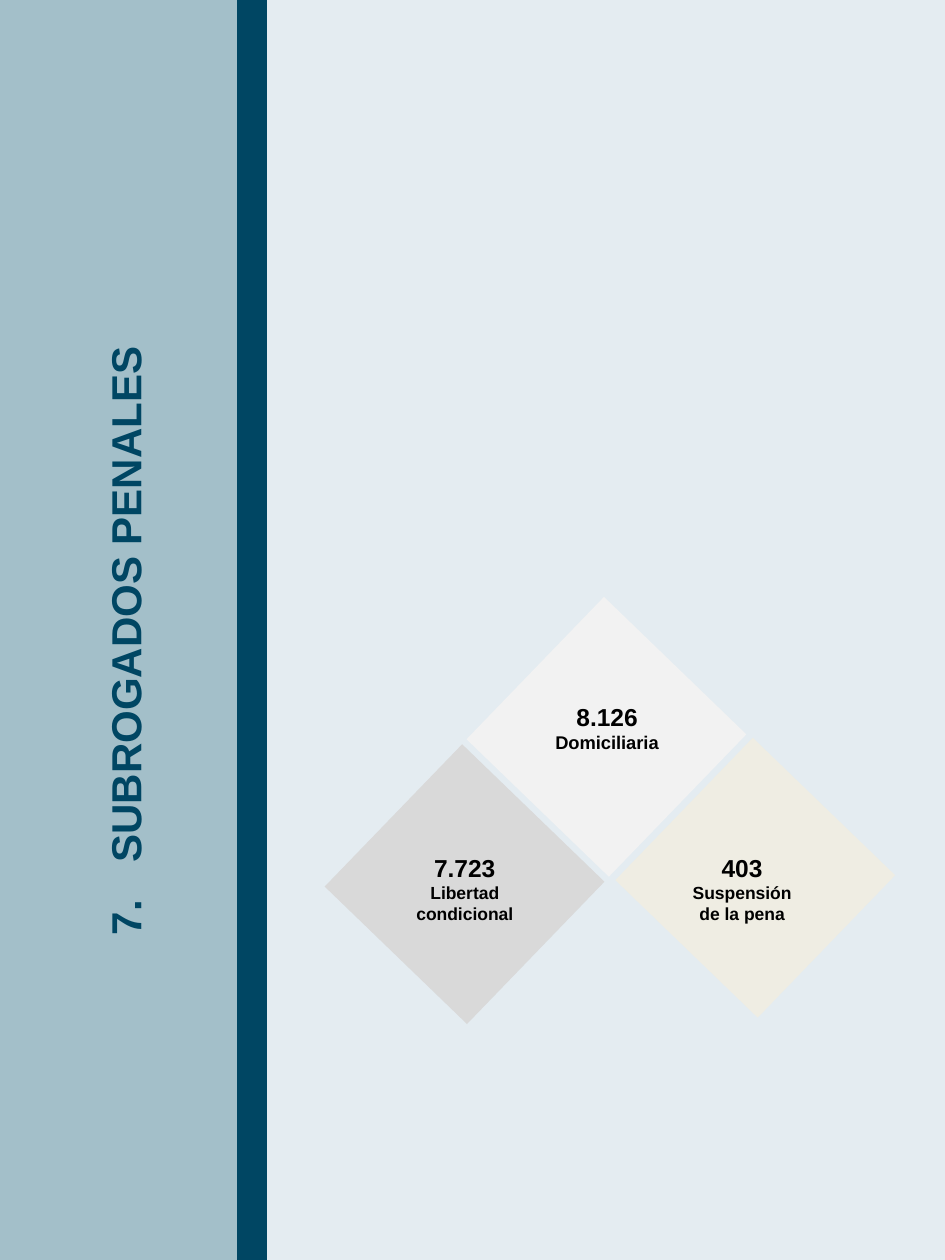
from pptx import Presentation
from pptx.dml.color import RGBColor
from pptx.enum.shapes import MSO_SHAPE as Shape
from pptx.enum.text import MSO_AUTO_SIZE as AutoSize, PP_ALIGN as Align
from pptx.util import Cm, Pt

NAVY = RGBColor(0x00, 0x46, 0x63)
TEAL = RGBColor(0xA3, 0xBF, 0xC9)
PALE = RGBColor(0xE4, 0xEC, 0xF1)
WHITE = RGBColor(0xF2, 0xF2, 0xF2)
CREAM = RGBColor(0xEF, 0xED, 0xE3)
GREY = RGBColor(0xD9, 0xD9, 0xD9)
BLACK = RGBColor(0x00, 0x00, 0x00)

WIDTH, HEIGHT = 19.05, 25.4
BAND = 4.78
TILE = 3.99


class Page:
    """Style and current slide; lengths are in centimetres."""
    font = "Arial"

    def __init__(self, slide):
        self.s = slide
        fill = slide.background.fill
        fill.solid()
        fill.fore_color.rgb = PALE

    def rect(self, x, y, w, h, color, rotation=0):
        sp = self.s.shapes.add_shape(Shape.RECTANGLE, Cm(x), Cm(y), Cm(w), Cm(h))
        sp.shadow.inherit = False
        sp.fill.solid()
        sp.fill.fore_color.rgb = color
        sp.line.fill.background()
        sp.rotation = rotation

    def text(self, x, y, w, h, lines, color=BLACK, align=Align.CENTER):
        tf = self.s.shapes.add_textbox(Cm(x), Cm(y), Cm(w), Cm(h)).text_frame
        tf.word_wrap = True
        for i, (line, size) in enumerate(lines):
            p = tf.paragraphs[0] if i == 0 else tf.add_paragraph()
            p.text = line
            p.alignment = align
            p.font.name, p.font.size, p.font.bold = self.font, Pt(size), True
            p.font.color.rgb = color
        return tf

    def title(self, x, y, w, h, line, start, hang):
        """Upward title whose tab reaches the hanging indent."""
        tf = self.text(x, y, w, h, [(line, 24)], NAVY, Align.LEFT)
        tf.auto_size = AutoSize.SHAPE_TO_FIT_TEXT
        tf._txBody.bodyPr.set("vert", "vert270")
        pPr = tf.paragraphs[0]._p.get_or_add_pPr()
        pPr.set("marL", str(Cm(start + hang)))
        pPr.set("indent", str(-Cm(hang)))


def main():
    prs = Presentation()
    prs.slide_width, prs.slide_height = Cm(WIDTH), Cm(HEIGHT)
    page = Page(prs.slides.add_slide(prs.slide_layouts[6]))

    # Side band and title
    page.rect(0, 0, BAND, HEIGHT, TEAL)
    page.rect(BAND, 0, 0.6, HEIGHT, NAVY)
    page.title(1.88, 1.9, 1.55, 22, "7.\tSUBROGADOS PENALES", 4.8, 1.46)

    # Diamonds
    for x, y, color in [(10.23, 12.86, WHITE), (13.23, 15.7, CREAM),
                        (7.37, 15.83, GREY)]:
        page.rect(x, y, TILE, TILE, color, rotation=44)

    # Figures and their labels
    for x, y, h, figure, size, labels in [
            (10.49, 14.02, 1.5, "8.126", 10.5, ["Domiciliaria"]),
            (7.62, 17.07, 1.5, "7.723", 10, ["Libertad condicional"]),
            (13.21, 17.07, 1.88, "403", 10, ["Suspensión", "de la pena"])]:
        lines = [(figure, 14)] + [(label, size) for label in labels]
        page.text(x, y, 3.5, h, lines)

    prs.save("out.pptx")


if __name__ == "__main__":
    main()
